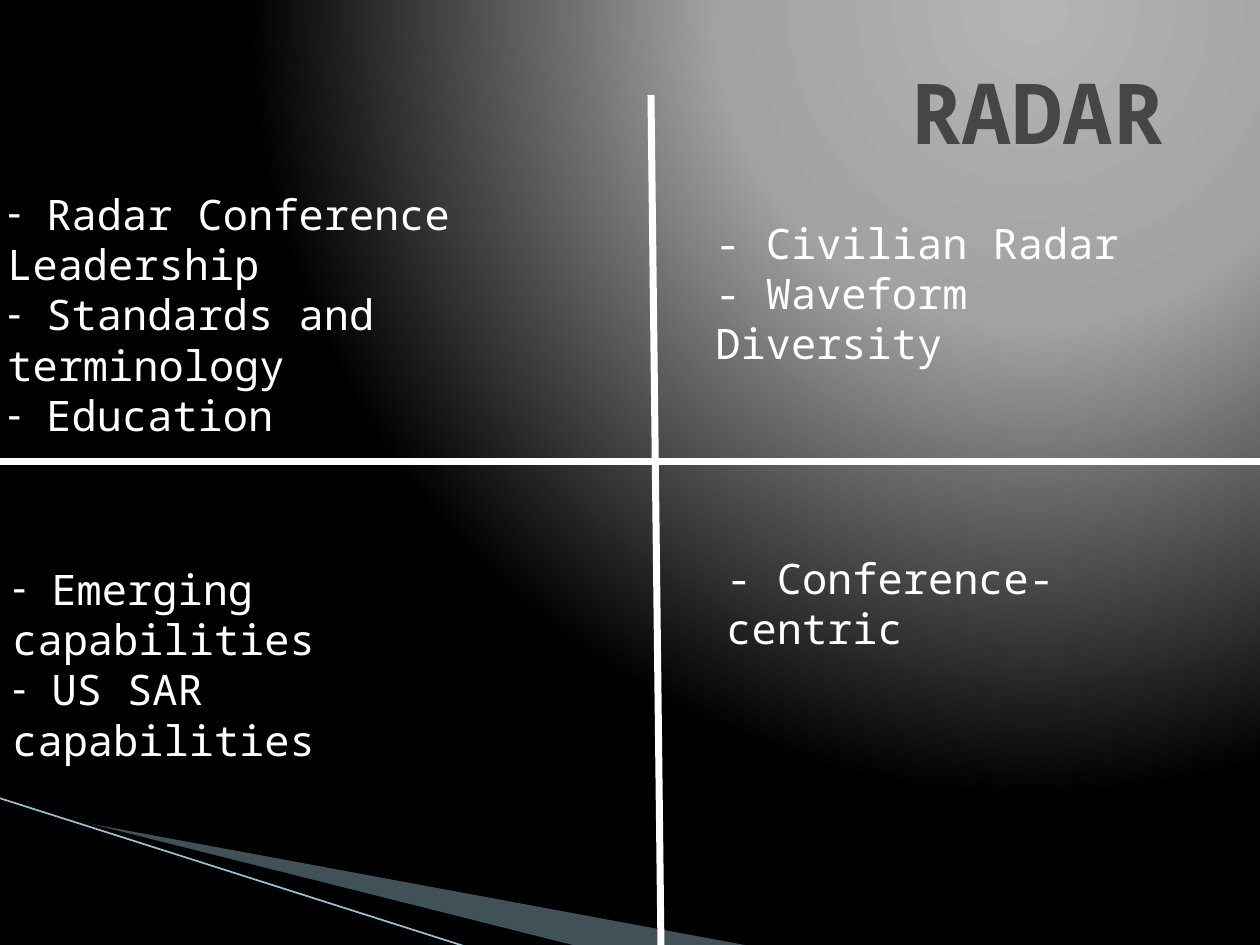
from lxml import etree
from pptx import Presentation
from pptx.dml.color import RGBColor
from pptx.enum.shapes import MSO_CONNECTOR as CONN
from pptx.enum.text import MSO_ANCHOR as ANCHOR, MSO_AUTO_SIZE as AUTO, PP_ALIGN as ALIGN
from pptx.oxml.ns import qn
from pptx.util import Emu, Pt

SCALE = 914400 / 126
WIDTH, HEIGHT = 1260, 945
FONT = "Noto Sans Mono"
WHITE = RGBColor(0xFF, 0xFF, 0xFF)
BLACK = RGBColor(0x00, 0x00, 0x00)
TITLE_GRAY = RGBColor(0x46, 0x46, 0x46)
WEDGE_BLUE = RGBColor(0xA0, 0xCB, 0xDC)
LINE_BLUE = RGBColor(0x97, 0xC5, 0xD8)
GLOW = [(0, RGBColor(0xB4, 0xB4, 0xB4)), (40, RGBColor(0xA2, 0xA2, 0xA2)), (100, BLACK)]

BODY = {"name": FONT, "size": Pt(24), "bold": False}
TITLE = {"name": FONT, "size": Pt(48), "bold": True}


def px(n):
    return Emu(round(n * SCALE))


def add_xml(parent, tag, **attrs):
    return etree.SubElement(parent, qn(tag), attrs)


class Deck:
    def __init__(self):
        self.prs = Presentation()
        self.prs.slide_width, self.prs.slide_height = px(WIDTH), px(HEIGHT)
        self.s = self.prs.slides.add_slide(self.prs.slide_layouts[6])

    def radial_background(self, stops, center):
        """Fill the background with a circular gradient; center is l, t, r, b in percent."""
        fill = self.s.background.fill
        fill.gradient()
        grad = self.s.background._cSld.find(".//" + qn("a:gradFill"))
        for child in list(grad):
            grad.remove(child)
        stop_list = add_xml(grad, "a:gsLst")
        for pos, color in stops:
            stop = add_xml(stop_list, "a:gs", pos=str(pos * 1000))
            add_xml(stop, "a:srgbClr", val=str(color))
        circle = add_xml(grad, "a:path", path="circle")
        sides = {side: str(n * 1000) for side, n in zip("ltrb", center)}
        add_xml(circle, "a:fillToRect", **sides)

    def wedge(self, points, color, alpha=100):
        builder = self.s.shapes.build_freeform(*points[0], scale=SCALE)
        builder.add_line_segments(points[1:])
        sp = builder.convert_to_shape()
        sp.shadow.inherit = False
        sp.line.fill.background()
        sp.fill.solid()
        sp.fill.fore_color.rgb = color
        if alpha < 100:
            clr = sp._element.spPr.find(".//" + qn("a:srgbClr"))
            add_xml(clr, "a:alpha", val=str(alpha * 1000))

    def line(self, x1, y1, x2, y2, color, width):
        ends = [px(n) for n in (x1, y1, x2, y2)]
        c = self.s.shapes.add_connector(CONN.STRAIGHT, *ends)
        c.line.color.rgb = color
        c.line.width = Pt(width)
        add_xml(c._element.spPr, "a:effectLst")

    def text(self, box, lines, style=BODY, color=WHITE, align=ALIGN.LEFT,
             anchor=ANCHOR.TOP, auto=AUTO.SHAPE_TO_FIT_TEXT, dashed=False):
        sp = self.s.shapes.add_textbox(*[px(n) for n in box])
        tf = sp.text_frame
        tf.word_wrap, tf.auto_size, tf.vertical_anchor = True, auto, anchor
        for i, line in enumerate(lines):
            p = tf.add_paragraph() if i else tf.paragraphs[0]
            p.alignment = align
            if dashed:
                pPr = p._p.get_or_add_pPr()
                add_xml(pPr, "a:buFont", typeface="Arial")
                add_xml(pPr, "a:buChar", char="-")
            r = p.add_run()
            r.text = line
            for name, value in style.items():
                setattr(r.font, name, value)
            r.font.color.rgb = color


def main():
    deck = Deck()
    deck.radial_background(GLOW, (65, 0, 0, 98))

    deck.wedge([(70, 820), (750, 946), (575, 946), (70, 819)], WEDGE_BLUE, alpha=40)
    deck.wedge([(67, 818), (576, 946), (469, 947), (68, 819)], BLACK)
    deck.line(-1, 798, 467, 947, LINE_BLUE, 0.95)

    deck.line(651, 95, 661, HEIGHT, WHITE, 4)
    deck.line(WIDTH, 462, 0, 462, WHITE, 4)

    deck.text((105, 0, 1071, 168), ["RADAR"], TITLE, TITLE_GRAY,
              ALIGN.RIGHT, ANCHOR.BOTTOM, AUTO.NONE)
    deck.text((-5, 182, 667, 165), [" Radar Conference Leadership",
                                    " Standards and terminology",
                                    " Education"], dashed=True)
    deck.text((703, 211, 462, 115), ["- Civilian Radar", "- Waveform Diversity"])
    deck.text((714, 546, 461, 63), ["- Conference-centric"])
    deck.text((0, 557, 505, 115), [" Emerging capabilities",
                                   " US SAR capabilities"], dashed=True)
    deck.prs.save("out.pptx")


if __name__ == "__main__":
    main()
